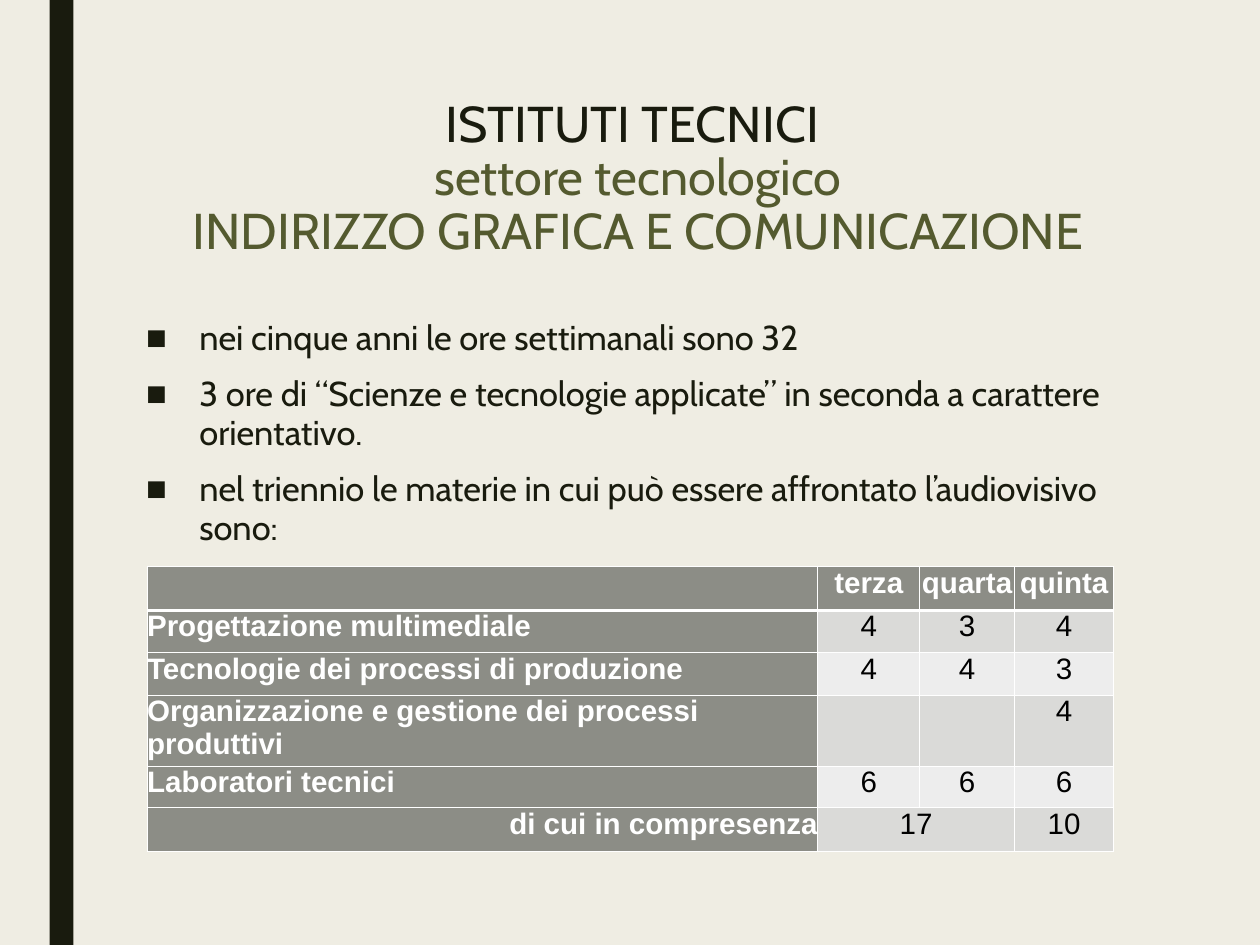
from lxml import etree
from pptx import Presentation
from pptx.dml.color import RGBColor
from pptx.enum import shapes, text
from pptx.oxml import ns
from pptx.util import Inches, Pt

INK, OLIVE, WHITE, GREY = "191B0E", "545A2F", "FFFFFF", "8C8D86"
BANDS = ("DADAD8", "EDEDED")
LEFT, CENTER, RIGHT = text.PP_ALIGN.LEFT, text.PP_ALIGN.CENTER, text.PP_ALIGN.RIGHT

TITLE = [
    ("ISTITUTI TECNICI ", INK),
    ("settore tecnologico", OLIVE),
    ("INDIRIZZO GRAFICA E COMUNICAZIONE", OLIVE),
]
POINTS = [
    "nei cinque anni le ore settimanali sono 32",
    "3 ore di “Scienze e tecnologie applicate” in seconda a carattere orientativo.",
    "nel triennio le materie in cui può essere affrontato l’audiovisivo sono:",
]
HOURS = [
    ("", "terza", "quarta", "quinta"),
    ("Progettazione multimediale", "4", "3", "4"),
    ("Tecnologie dei processi di produzione", "4", "4", "3"),
    ("Organizzazione e gestione dei processi produttivi", "", "", "4"),
    ("Laboratori tecnici", "6", "6", "6"),
    ("di cui in compresenza", "17", "", "10"),
]
COL_WIDTHS = (7.57, 1.15, 1.07, 1.12)
ROW_HEIGHTS = (0.49, 0.48, 0.48, 0.5, 0.47, 0.5)


def rgb(value):
    """Return the colour for a hex string."""
    return RGBColor.from_string(value)


def fill(obj, color):
    """Give a shape, cell or background a solid fill."""
    obj.fill.solid()
    obj.fill.fore_color.rgb = rgb(color)


def write(p, words, size=24, font="Arial", color=INK, bold=False,
          align=LEFT, spacing=1.0, before=0):
    """Write one formatted run into a paragraph."""
    p.alignment = align
    p.line_spacing = spacing
    p.space_before = Pt(before)
    r = p.add_run()
    r.text = words
    r.font.size = Pt(size)
    r.font.name = font
    r.font.bold = bold
    r.font.color.rgb = rgb(color)


def add_bullet(p, char, color, indent):
    """Give a paragraph a coloured bullet with a hanging indent."""
    pPr = p._p.get_or_add_pPr()
    pPr.set("marL", str(indent))
    pPr.set("indent", str(-indent))
    clr = etree.SubElement(pPr, ns.qn("a:buClr"))
    etree.SubElement(clr, ns.qn("a:srgbClr"), val=color)
    etree.SubElement(pPr, ns.qn("a:buFont"), typeface="Arial")
    etree.SubElement(pPr, ns.qn("a:buChar"), char=char)


def add_box(slide, left, top, width, height):
    """Add a wrapping text box and return its text frame."""
    box = slide.shapes.add_textbox(Inches(left), Inches(top), Inches(width), Inches(height))
    tf = box.text_frame
    tf.word_wrap = True
    tf.margin_left = tf.margin_right = tf.margin_top = tf.margin_bottom = Inches(0.05)
    return tf


def next_paragraph(tf, index):
    """Return the first paragraph, or a new one after it."""
    return tf.add_paragraph() if index else tf.paragraphs[0]


def add_side_bar(slide, height):
    """Draw the dark bar down the left side."""
    sp = slide.shapes.add_shape(shapes.MSO_SHAPE.RECTANGLE, Inches(0.56), 0, Inches(0.27), height)
    sp.shadow.inherit = False
    fill(sp, INK)
    sp.line.fill.background()


def add_title(slide):
    """Add the three centred title lines."""
    tf = add_box(slide, 1.6, 1.07, 11.2, 2.31)
    for i, (words, color) in enumerate(TITLE):
        write(next_paragraph(tf, i), words, size=40.9, font="Cabin", color=color,
              align=CENTER, spacing=0.89)


def add_points(slide):
    """Add the bulleted list."""
    tf = add_box(slide, 1.6, 3.56, 11.2, 5.57)
    for i, words in enumerate(POINTS):
        p = next_paragraph(tf, i)
        write(p, words, size=28, font="Cabin", spacing=0.94, before=14 if i else 0)
        add_bullet(p, "■", INK, Inches(0.6))


def set_borders(cell, **widths):
    """Draw white cell borders, with widths in points by side."""
    tcPr = cell._tc.get_or_add_tcPr()
    for i, (side, width) in enumerate(widths.items()):
        ln = etree.Element(ns.qn(f"a:ln{side}"), w=str(Pt(width)))
        solid = etree.SubElement(ln, ns.qn("a:solidFill"))
        etree.SubElement(solid, ns.qn("a:srgbClr"), val=WHITE)
        tcPr.insert(i, ln)


def format_cell(cell, words, row, col):
    """Fill, border and write one cell according to its place."""
    heading = row == 0 or col == 0
    cell.margin_left = cell.margin_right = cell.margin_top = cell.margin_bottom = 0
    fill(cell, GREY if heading else BANDS[(row - 1) % 2])
    set_borders(cell, L=1, R=1, T=3 if row == 1 else 1, B=3 if row == 0 else 1)
    if words:
        label_align = RIGHT if row == len(HOURS) - 1 else LEFT
        write(cell.text_frame.paragraphs[0], words, color=WHITE if heading else "000000",
              bold=heading, align=CENTER if col else label_align)


def add_hours_table(slide):
    """Add the table of weekly hours."""
    table = slide.shapes.add_table(
        len(HOURS), len(COL_WIDTHS), Inches(1.66), Inches(6.4),
        Inches(sum(COL_WIDTHS)), Inches(sum(ROW_HEIGHTS))).table
    for column, width in zip(table.columns, COL_WIDTHS):
        column.width = Inches(width)
    for row, height in zip(table.rows, ROW_HEIGHTS):
        row.height = Inches(height)
    for i, values in enumerate(HOURS):
        for j, words in enumerate(values):
            format_cell(table.cell(i, j), words, i, j)
    table.cell(5, 1).merge(table.cell(5, 2))


def main():
    """Build the slide and save it."""
    prs = Presentation()
    prs.slide_width, prs.slide_height = Inches(14.22), Inches(10.67)
    slide = prs.slides.add_slide(prs.slide_layouts[6])
    fill(slide.background, "EFEDE3")
    add_side_bar(slide, prs.slide_height)
    add_title(slide)
    add_points(slide)
    add_hours_table(slide)
    prs.save("out.pptx")


if __name__ == "__main__":
    main()
